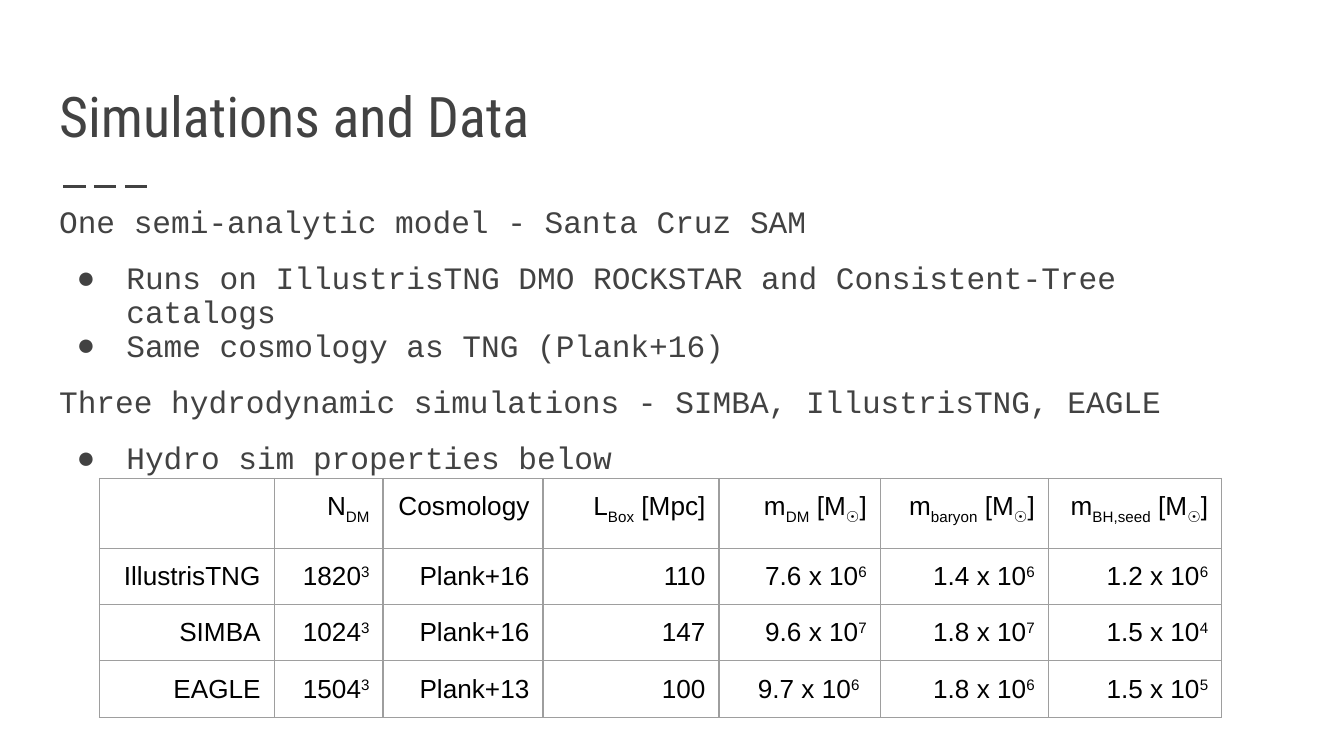
from lxml import etree
from pptx import Presentation
from pptx.dml.color import RGBColor
from pptx.enum.dml import MSO_LINE
from pptx.enum.shapes import MSO_CONNECTOR
from pptx.enum.text import MSO_ANCHOR, MSO_AUTO_SIZE, PP_ALIGN
from pptx.oxml import parse_xml
from pptx.oxml.ns import qn
from pptx.util import Inches, Pt

DASH = MSO_LINE.LONG_DASH
LINE = MSO_CONNECTOR.STRAIGHT
LEFT, RIGHT = PP_ALIGN.LEFT, PP_ALIGN.RIGHT
TOP, BASE = MSO_ANCHOR.TOP, MSO_ANCHOR.BOTTOM
FIXED = MSO_AUTO_SIZE.NONE
NS = "http://schemas.openxmlformats.org/drawingml/2006/main"
HUES = {"text": "424242", "cell": "000000", "grid": "9E9E9E"}


def style(font, name, size, hue):
    font.name = name
    font.size = Pt(size)
    font.color.rgb = RGBColor.from_string(HUES[hue])


def place(shape, top, high, anchor):
    shape.left, shape.top = Inches(0.34), Inches(top)
    shape.width, shape.height = Inches(9.32), Inches(high)
    frame = shape.text_frame
    frame.margin_left = frame.margin_top = frame.margin_bottom = Inches(0.1)
    frame.margin_right = Inches(0.15)
    frame.vertical_anchor = anchor
    frame.word_wrap = True
    frame.auto_size = FIXED
    return frame


deck = Presentation()
deck.slide_width, deck.slide_height = Inches(10), Inches(10 * 9 / 16)
slide = deck.slides.add_slide(deck.slide_layouts[1])

rule = slide.shapes.add_connector(
    LINE, Inches(0.47), Inches(1.39), Inches(1.14), Inches(1.39))
rule.line.color.rgb = RGBColor.from_string(HUES["text"])
rule.line.width = Pt(1.5)
rule.line.dash_style = DASH
etree.SubElement(rule._element.spPr, qn("a:effectLst"))

title = place(slide.shapes.title, 0.41, 0.8, BASE)
title.text = "Simulations and Data"
head = title.paragraphs[0]
head.alignment = LEFT
style(head.font, "Roboto Condensed", 30, "text")

items = [
    ("One semi-analytic model - Santa Cruz SAM", False, 0),
    ("Runs on IllustrisTNG DMO ROCKSTAR and Consistent-Tree catalogs", True, 12),
    ("Same cosmology as TNG (Plank+16)", True, 0),
    ("Three hydrodynamic simulations - SIMBA, IllustrisTNG, EAGLE", False, 12),
    ("Hydro sim properties below", True, 12),
]
body = place(slide.placeholders[1], 1.44, 2.01, TOP)
body.text = "\n".join(text for text, _, _ in items)
for para, (_, dot, gap) in zip(body.paragraphs, items):
    para.alignment = LEFT
    para.line_spacing = 0.9
    para.space_before = Pt(gap)
    para.space_after = Pt(0)
    style(para.font, "Courier New", 16.7, "text")
    props = para._p.get_or_add_pPr()
    props.set("marL", str(Inches(0.5 if dot else 0)))
    props.set("indent", str(Inches(-0.37 if dot else 0)))
    mark = etree.Element(qn("a:buChar" if dot else "a:buNone"))
    if dot:
        mark.set("char", "●")
    props.insert_element_before(mark, "a:tabLst", "a:defRPr", "a:extLst")

rows = [
    ["", "N|DM", "Cosmology", "L|Box| [Mpc]", "m|DM| [M|☉|]",
     "m|baryon| [M|☉|]", "m|BH,seed| [M|☉|]"],
    ["IllustrisTNG", "1820|3", "Plank+16", "110",
     "7.6 x 10|6", "1.4 x 10|6", "1.2 x 10|6"],
    ["SIMBA", "1024|3", "Plank+16", "147",
     "9.6 x 10|7", "1.8 x 10|7", "1.5 x 10|4"],
    ["EAGLE", "1504|3", "Plank+13", "100",
     "9.7 x 10|6| ", "1.8 x 10|6", "1.5 x 10|5"],
]
wide = [1.3, 0.81, 1.19, 1.31, 1.2, 1.25, 1.29]
high = [0.52, 0.41, 0.41, 0.41]
table = slide.shapes.add_table(
    len(rows), len(wide), Inches(0.74), Inches(3.56),
    Inches(sum(wide)), Inches(sum(high))).table
table.first_row = table.horz_banding = False
for col, size in zip(table.columns, wide):
    col.width = Inches(size)
for row, size in zip(table.rows, high):
    row.height = Inches(size)

for r, row in enumerate(rows):
    shift = "30000" if r else "-25000"
    for c, text in enumerate(row):
        cell = table.cell(r, c)
        cell.margin_left = cell.margin_right = Inches(0.1)
        cell.margin_top = cell.margin_bottom = Inches(0.1)
        cell.fill.background()
        para = cell.text_frame.paragraphs[0]
        para.alignment = RIGHT
        style(para.font, "Arial", 14, "cell")
        for i, part in enumerate(text.split("|")):
            if part:
                run = para.add_run()
                run.text = part
                if i % 2:
                    run.font._element.set("baseline", shift)
        props = cell._tc.get_or_add_tcPr()
        for i, side in enumerate("LRTB"):
            props.insert(i, parse_xml(
                f'<a:ln{side} xmlns:a="{NS}" w="{Pt(0.75)}"><a:solidFill>'
                f'<a:srgbClr val="{HUES["grid"]}"/></a:solidFill></a:ln{side}>'))

deck.save("out.pptx")
